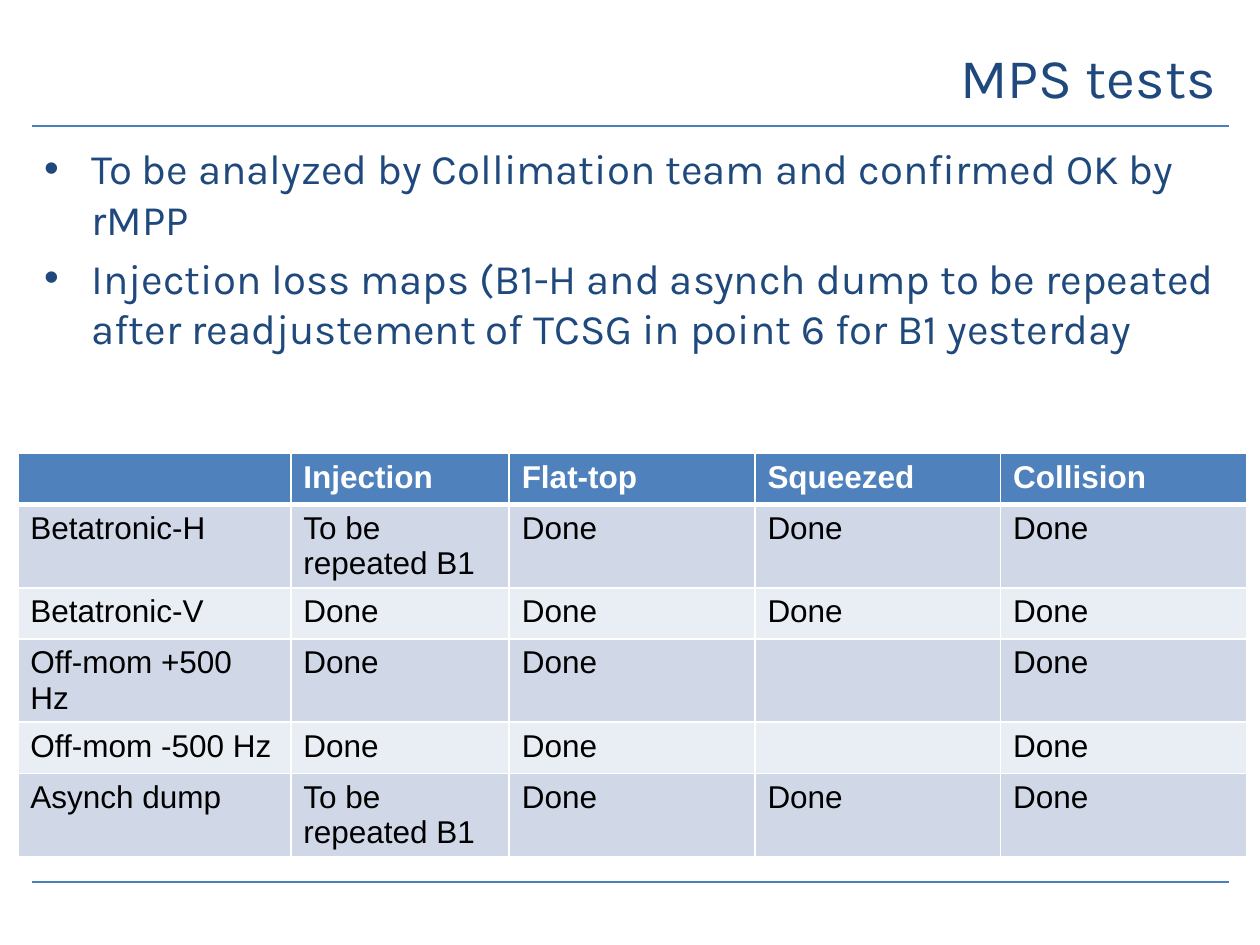
from lxml import etree
from pptx import Presentation
from pptx.dml.color import RGBColor
from pptx.enum import shapes, text
from pptx.oxml import ns
from pptx.util import Pt

# Content
TITLE = "MPS tests"
NOTES = [
    "To be analyzed by Collimation team and confirmed OK by rMPP",
    "Injection loss maps (B1-H and asynch dump to be repeated after "
    "readjustement of TCSG in point 6 for B1 yesterday",
]
TESTS = [
    ("", "Injection", "Flat-top", "Squeezed", "Collision"),
    ("Betatronic-H", "To be repeated B1", "Done", "Done", "Done"),
    ("Betatronic-V", "Done", "Done", "Done", "Done"),
    ("Off-mom +500 Hz", "Done", "Done", "", "Done"),
    ("Off-mom -500 Hz", "Done", "Done", "", "Done"),
    ("Asynch dump", "To be repeated B1", "Done", "Done", "Done"),
]
COLUMN_WIDTHS = [156, 124.8, 140.4, 140.4, 140.4]
ROW_HEIGHT = 29.2
NAVY, RULE_BLUE, HEADER_BLUE = "1F497D", "4B7EBC", "4F81BD"
BANDS = ["E9EDF4", "D0D8E8"]
WHITE, BLACK = "FFFFFF", "000000"


def rgb(color):
    return RGBColor.from_string(color)


def style(paragraph, name, size, color, bold=False):
    font = paragraph.font
    font.name, font.size, font.bold = name, Pt(size), bold
    font.color.rgb = rgb(color)


def place(part, left, top, width, height):
    part.left, part.top = Pt(left), Pt(top)
    part.width, part.height = Pt(width), Pt(height)


def add_child(parent, tag, **attributes):
    return etree.SubElement(parent, ns.qn(tag), attributes)


def add_border(cell, side, weight):
    line = add_child(cell._tc.get_or_add_tcPr(), f"a:ln{side}", w=str(Pt(weight)))
    add_child(add_child(line, "a:solidFill"), "a:srgbClr", val=WHITE)


prs = Presentation()
prs.slide_width, prs.slide_height = Pt(720), Pt(540)
slide = prs.slides.add_slide(prs.slide_layouts[1])

# Rules above and below the content
for y in (72, 504):
    rule = slide.shapes.add_connector(
        shapes.MSO_CONNECTOR.STRAIGHT, Pt(18), Pt(y), Pt(702), Pt(y))
    rule.line.color.rgb = rgb(RULE_BLUE)
    rule.line.width = Pt(1.5)
    add_child(rule._element.spPr, "a:effectLst")

# Title
title = slide.shapes.title
place(title, 126, 12.5, 576, 62.5)
title.text_frame.text = TITLE
title.text_frame.auto_size = text.MSO_AUTO_SIZE.NONE
title.text_frame.vertical_anchor = text.MSO_ANCHOR.MIDDLE
heading = title.text_frame.paragraphs[0]
heading.alignment = text.PP_ALIGN.RIGHT
style(heading, "Karla", 32, NAVY)

# Bulleted notes
body = slide.placeholders[1]
place(body, 18, 78, 684, 72)
body.text_frame.auto_size = text.MSO_AUTO_SIZE.NONE
body.text_frame.text = "\n".join(NOTES)
for index, note in enumerate(body.text_frame.paragraphs):
    properties = note._p.get_or_add_pPr()
    properties.set("marL", str(Pt(27)))
    properties.set("indent", str(Pt(-27)))
    add_child(properties, "a:buFont", typeface="Arial")
    add_child(properties, "a:buChar", char="•")
    note.space_before = Pt(4.8 if index else 0)
    style(note, "Karla", 24, NAVY)

# Test status table
status = slide.shapes.add_table(
    len(TESTS), len(COLUMN_WIDTHS), Pt(10.2), Pt(259.2),
    Pt(sum(COLUMN_WIDTHS)), Pt(ROW_HEIGHT * len(TESTS))).table
for column, width in zip(status.columns, COLUMN_WIDTHS):
    column.width = Pt(width)
for r, row in enumerate(TESTS):
    status.rows[r].height = Pt(ROW_HEIGHT)
    header = r == 0
    weights = {"L": 1, "R": 1, "T": 3 if r == 1 else 1, "B": 3 if header else 1}
    for c, entry in enumerate(row):
        cell = status.cell(r, c)
        for side, weight in weights.items():
            add_border(cell, side, weight)
        cell.fill.solid()
        cell.fill.fore_color.rgb = rgb(HEADER_BLUE if header else BANDS[r % 2])
        cell.text = entry
        style(cell.text_frame.paragraphs[0], "Arial", 18,
              WHITE if header else BLACK, bold=header)

prs.save("out.pptx")
